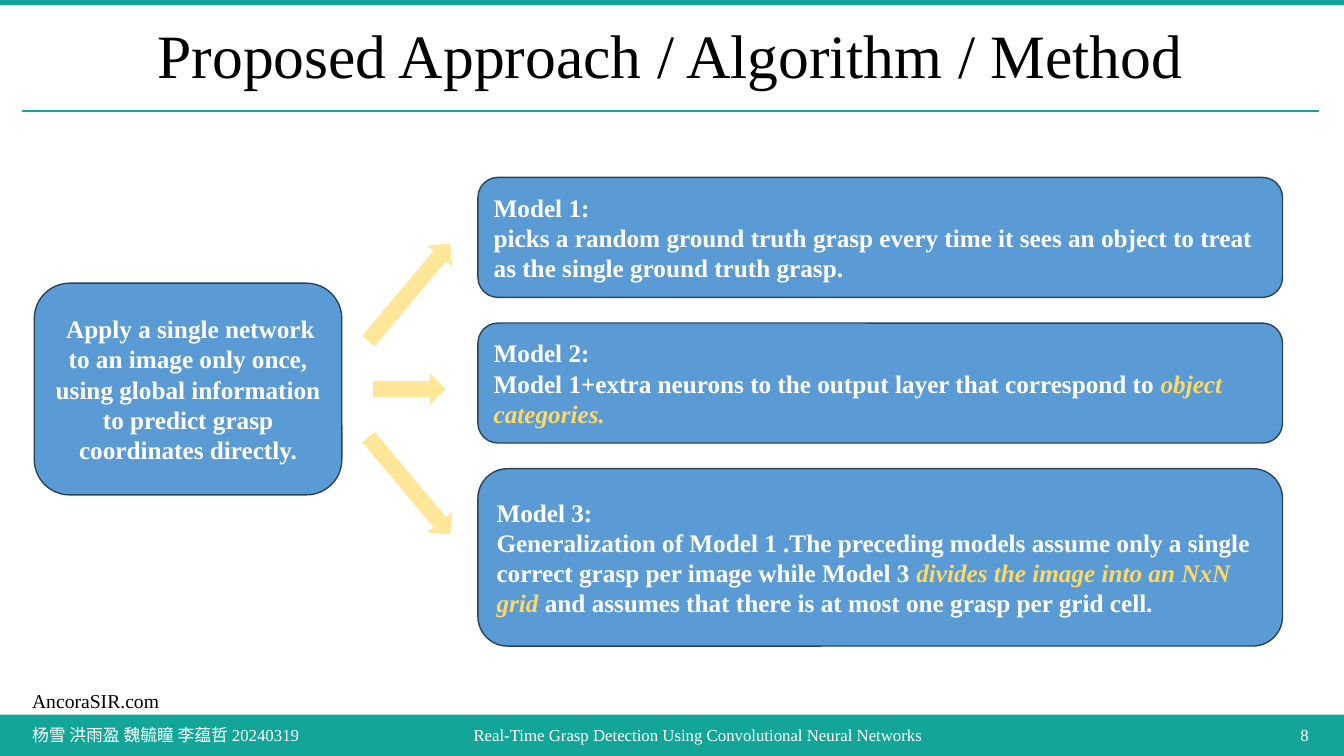
from pptx import Presentation
from pptx.dml.color import RGBColor
from pptx.enum.shapes import MSO_CONNECTOR, MSO_SHAPE
from pptx.enum.text import MSO_ANCHOR, PP_ALIGN
from pptx.oxml.ns import qn
from pptx.util import Inches, Pt
from lxml import etree

# Content
TITLE = "Proposed Approach / Algorithm / Method"
SITE = "AncoraSIR.com"
IDEA = (" Apply a single network to an image only once, using global "
        "information to predict grasp coordinates directly.")
# Each model: box height, then paragraphs of (text, highlighted) runs
MODELS = [
    (1.19, [[("Model 1:", False)],
            [("picks a random ground truth grasp every time it sees an object "
              "to treat as the single ground truth grasp.", False)]]),
    (1.19, [[("Model 2:", False)],
            [("Model 1+extra neurons to the output layer that correspond to ", False),
             ("object categories.", True)]]),
    (1.76, [[("Model 3:", False)],
            [("Generalization of Model 1 .The preceding models assume only a "
              "single correct grasp per image while Model 3 ", False),
             ("divides the image into an NxN grid", True),
             (" and assumes that there is at most one grasp per grid cell.", False)]]),
]
FOOTER = [  # text, left, width, alignment
    ("杨雪 洪雨盈 魏毓瞳 李蕴哲 20240319", 0.22, 4.86, PP_ALIGN.LEFT),
    ("Real-Time Grasp Detection Using Convolutional Neural Networks", 4.11, 5.63, PP_ALIGN.CENTER),
    ("8", 8.25, 4.83, PP_ALIGN.RIGHT),
]

# Layout and style
FONT = "Times New Roman"
TEAL, WHITE, BLACK = "14A599", "FFFFFF", "000000"
BLUE, NAVY, GOLD, SAND = "5B9BD5", "28445D", "FFD966", "FFE699"
LEFT, RIGHT = 0.22, 13.08
BAND_TOP = 7.09
MODEL_LEFT, MODEL_TOP, MODEL_WIDTH, MODEL_GAP = 4.74, 1.76, 7.98, 0.255
ARROW_X, ARROW_Y, ARROW_RISE, ARROW_HEIGHT = 4.06, 3.86, 0.96, 0.32


def rgb(color):
    return RGBColor.from_string(color)


def add_shape(kind, x, y, w, h, fill, line=None):
    s = slide.shapes.add_shape(kind, Inches(x), Inches(y), Inches(w), Inches(h))
    s.shadow.inherit = False
    s.fill.solid()
    s.fill.fore_color.rgb = rgb(fill)
    if line:
        s.line.color.rgb = rgb(line)
        s.line.width = Pt(1)
    else:
        s.line.fill.background()
    return s


def write(sp, paragraphs, size, color, align=PP_ALIGN.LEFT, bold=False, wrap=True):
    tf = sp.text_frame
    tf.word_wrap = wrap
    tf.vertical_anchor = MSO_ANCHOR.MIDDLE
    for i, runs in enumerate(paragraphs):
        p = tf.paragraphs[0] if i == 0 else tf.add_paragraph()
        p.alignment = align
        p.font.name, p.font.size, p.font.bold = FONT, Pt(size), bold
        p.font.color.rgb = rgb(color)
        for text, highlighted in runs:
            r = p.add_run()
            r.text = text
            if highlighted:
                r.font.italic = True
                r.font.color.rgb = rgb(GOLD)


def add_text(text, x, y, w, h, size, color, align=PP_ALIGN.LEFT, wrap=True):
    sp = slide.shapes.add_textbox(Inches(x), Inches(y), Inches(w), Inches(h))
    write(sp, [[(text, False)]], size, color, align, wrap=wrap)


prs = Presentation()
prs.slide_width, prs.slide_height = Inches(13.33), Inches(7.5)
slide = prs.slides.add_slide(prs.slide_layouts[5])

# Teal background with a white page between the bands
slide.background.fill.solid()
slide.background.fill.fore_color.rgb = rgb(TEAL)
page = add_shape(MSO_SHAPE.RECTANGLE, 0, 0.05, 13.33, BAND_TOP - 0.05, WHITE)
slide.shapes._spTree.insert(2, page._element)  # behind the title

# Title and rule
title = slide.shapes.title
title.left, title.top = Inches(LEFT), Inches(0.08)
title.width, title.height = Inches(RIGHT - LEFT), Inches(1.01)
write(title, [[(TITLE, False)]], 44, BLACK, PP_ALIGN.CENTER)
title.text_frame.paragraphs[0].line_spacing = 0.9
rule = slide.shapes.add_connector(MSO_CONNECTOR.STRAIGHT, Inches(LEFT), Inches(1.1),
                                  Inches(RIGHT), Inches(1.1))
rule.line.color.rgb = rgb(TEAL)
rule.line.width = Pt(1)
etree.SubElement(rule._element.spPr, qn("a:effectLst"))

# Core idea
idea = add_shape(MSO_SHAPE.ROUNDED_RECTANGLE, 0.34, 2.81, 3.05, 2.1, BLUE, NAVY)
write(idea, [[(IDEA, False)]], 18, WHITE, PP_ALIGN.CENTER, bold=True)

# Models, stacked with equal gaps
top = MODEL_TOP
for height, paragraphs in MODELS:
    box = add_shape(MSO_SHAPE.ROUNDED_RECTANGLE, MODEL_LEFT, top, MODEL_WIDTH, height, BLUE, NAVY)
    write(box, paragraphs, 18, WHITE, bold=True)
    top += height + MODEL_GAP

# Arrows fanning out from the idea to the models
for step, length in ((-1, 1.26), (0, 0.72), (1, 1.26)):
    arrow = add_shape(MSO_SHAPE.RIGHT_ARROW, ARROW_X - length / 2,
                      ARROW_Y + step * ARROW_RISE - ARROW_HEIGHT / 2,
                      length, ARROW_HEIGHT, SAND)
    arrow.rotation = step * 50

# Site name and footer
add_text(SITE, LEFT, 6.78, 1.47, 0.34, 14, BLACK, wrap=False)
for text, x, w, align in FOOTER:
    add_text(text, x, BAND_TOP, w, 0.4, 12, WHITE, align)

prs.save("out.pptx")
